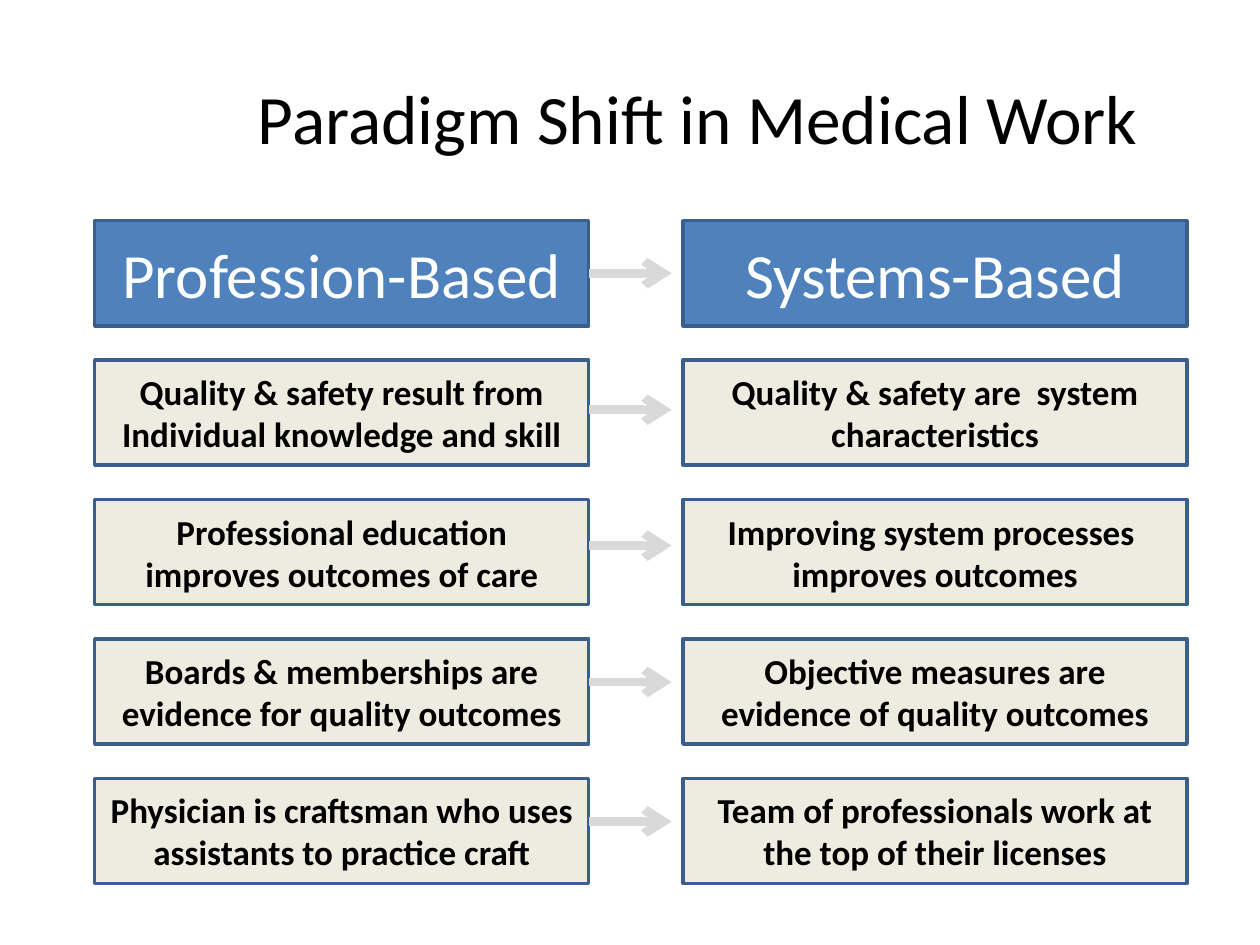
import pptx
import pptx.util
import pptx.dml.color
import pptx.enum.shapes
import pptx.enum.text
import pptx.oxml
import pptx.oxml.ns

Cm, Pt = pptx.util.Cm, pptx.util.Pt


def paint(color, code):
    color.rgb = pptx.dml.color.RGBColor.from_string(code)


def write(shape, words, size, code, bold=False):
    """Put centred Calibri text in the middle of the shape."""
    frame = shape.text_frame
    frame.text = words
    frame.word_wrap = True
    frame.vertical_anchor = pptx.enum.text.MSO_ANCHOR.MIDDLE
    line = frame.paragraphs[0]
    line.alignment = pptx.enum.text.PP_ALIGN.CENTER
    font = line.runs[0].font
    font.name, font.size, font.bold = "Calibri", Pt(size), bold
    paint(font.color, code)


deck = pptx.Presentation()
deck.slide_width, deck.slide_height = Cm(25.4), Cm(19.05)
slide = deck.slides.add_slide(deck.slide_layouts[6])
shapes = slide.shapes

title = shapes.add_textbox(Cm(4.01), Cm(0.76), Cm(20.12), Cm(3.18))
write(title, "Paradigm Shift in Medical Work", 39.6, "000000")

# Each row: left text, right text, height of the arrow on the slide
rows = [
    ("Profession-Based", "Systems-Based", 5.51),
    ("Quality & safety result from Individual knowledge and skill",
     "Quality & safety are  system characteristics", 8.26),
    ("Professional education improves outcomes of care",
     "Improving system processes  improves outcomes", 11),
    ("Boards & memberships are evidence for quality outcomes",
     "Objective measures are evidence of quality outcomes", 13.75),
    ("Physician is craftsman who uses assistants to practice craft",
     "Team of professionals work at the top of their licenses", 16.56),
]
sides = [(1.91, 9.96), (13.77, 10.16)]
top, pitch, high = 4.45, 2.81, 2.12

for row, (old, new, level) in enumerate(rows):
    head = row == 0
    pair = []
    for words, (left, width) in zip((old, new), sides):
        box = shapes.add_shape(
            pptx.enum.shapes.MSO_SHAPE.RECTANGLE,
            Cm(left), Cm(top + row * pitch), Cm(width), Cm(high))
        box.shadow.inherit = False
        box.fill.solid()
        paint(box.fill.fore_color, "4F81BD" if head else "EEECE1")
        paint(box.line.color, "3A5F8C")
        box.line.width = Pt(2)
        if head:
            write(box, words, 36, "FFFFFF")
        else:
            write(box, words, 20, "000000", True)
        pair.append(box)

    arrow = shapes.add_connector(
        pptx.enum.shapes.MSO_CONNECTOR.STRAIGHT,
        Cm(11.87), Cm(level), Cm(13.54), Cm(level))
    if head:  # only this arrow starts at the middle of its box
        arrow.begin_connect(pair[0], 3)
    paint(arrow.line.color, "D9D9D9")
    arrow.line.width = Pt(5)
    tip = pptx.oxml.ns.qn("a:tailEnd")
    arrow.line._get_or_add_ln().makeelement(tip, {})
    end = pptx.oxml.parse_xml(
        '<a:tailEnd xmlns:a="http://schemas.openxmlformats.org/drawingml/2006/main"'
        ' type="arrow"/>')
    arrow.line._get_or_add_ln().append(end)
    props = arrow._element.spPr
    props.append(props.makeelement(pptx.oxml.ns.qn("a:effectLst"), {}))

deck.save("out.pptx")
